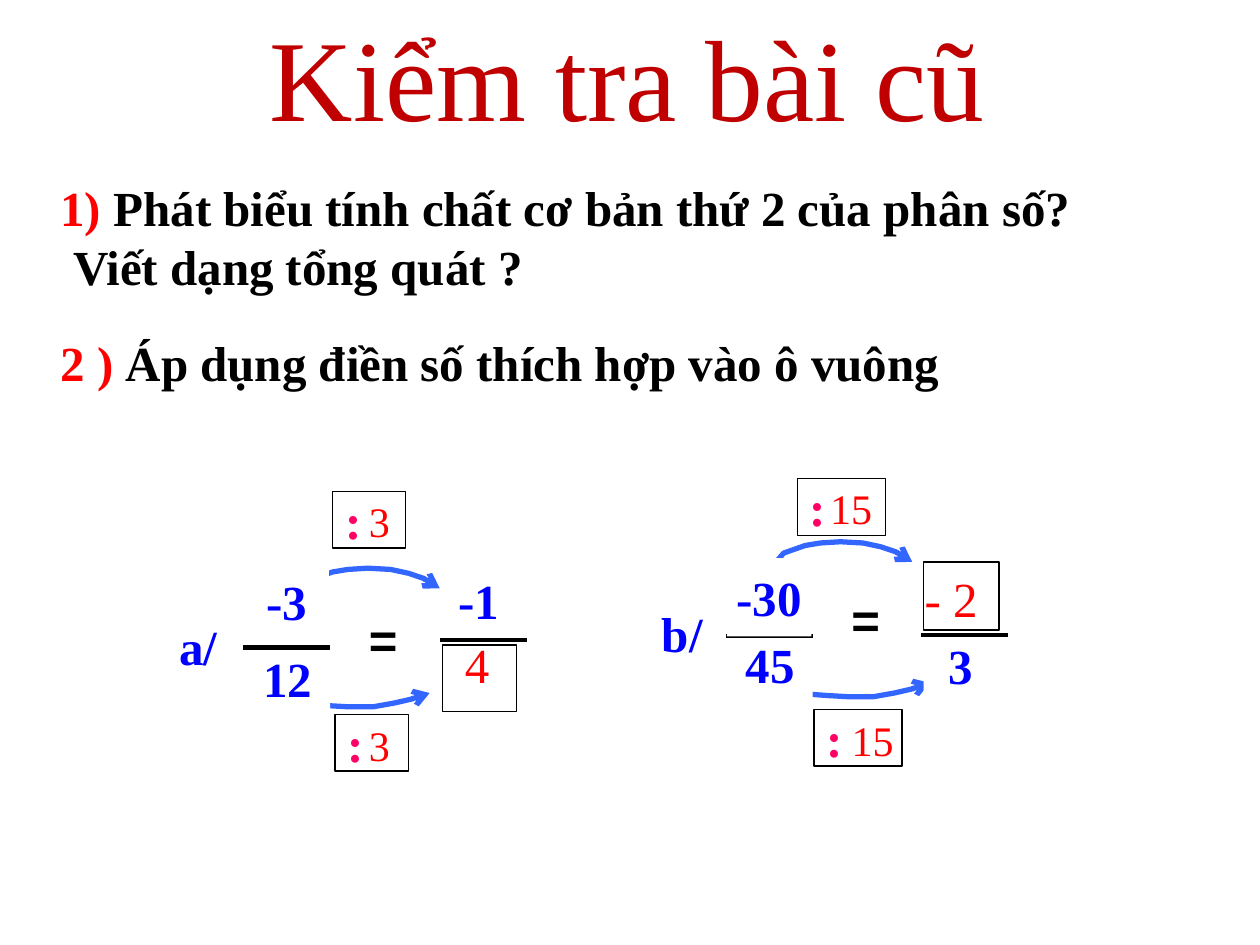
from dataclasses import dataclass

from pptx import Presentation
from pptx.dml.color import RGBColor as RGB
from pptx.enum.shapes import MSO_CONNECTOR as CONN, MSO_SHAPE as SHAPE
from pptx.enum.text import MSO_ANCHOR as ANCHOR, MSO_AUTO_SIZE as AUTO, PP_ALIGN as ALIGN
from pptx.oxml.ns import qn
from pptx.util import Inches, Pt
from lxml.etree import SubElement


@dataclass(frozen=True)
class Theme:
    serif: str = "Times New Roman"
    sans: str = "Arial"
    title: RGB = RGB(0xC0, 0x00, 0x00)
    answer: RGB = RGB(0xFF, 0x00, 0x00)
    number: RGB = RGB(0x00, 0x00, 0xFF)
    colon: RGB = RGB(0xFF, 0x00, 0x66)
    arrow: RGB = RGB(0x33, 0x66, 0xFF)
    ink: RGB = RGB(0x00, 0x00, 0x00)
    paper: RGB = RGB(0xFF, 0xFF, 0xFF)
    title_size: int = 66
    text_size: int = 28
    small_size: int = 24


T = Theme()
prs = Presentation()
prs.slide_width, prs.slide_height = Inches(10), Inches(7.5)
COL, ROW = prs.slide_width / 100, prs.slide_height / 75
s = prs.slides.add_slide(prs.slide_layouts[1])


def grid(x, y, w, h):
    return int(x * COL), int(y * ROW), int(w * COL), int(h * ROW)


def style(runs, color, size=T.text_size, bold=True, font=T.serif):
    for r in runs:
        r.font.name, r.font.size, r.font.bold = font, Pt(size), bold
        r.font.color.rgb = color


title, body = s.shapes.title, s.placeholders[1]
title.left, title.top, title.width, title.height = grid(20.4, 0, 58.8, 12)
tf = title.text_frame
tf.text = "Kiểm tra bài cũ"
tf.word_wrap, tf.auto_size = False, AUTO.NONE
style(tf.paragraphs[0].runs, T.title, T.title_size, False)

body.left, body.top, body.width, body.height = grid(3.8, 13.6, 82.5, 18)
tf = body.text_frame
tf.word_wrap, tf.auto_size = True, AUTO.NONE
questions = [
    ("1) ", "Phát biểu tính chất cơ bản thứ 2 của phân số? Viết dạng tổng quát ?", 0),
    ("2 ) ", "Áp dụng điền số thích hợp vào ô vuông", 21),
]
for i, (number, question, gap) in enumerate(questions):
    p = tf.add_paragraph() if i else tf.paragraphs[0]
    p.text = number
    p.add_run().text = question
    p.space_before = Pt(gap)
    pPr = p._p.get_or_add_pPr()
    pPr.set("marL", str(int(COL)))
    pPr.set("indent", str(-int(COL)))
    SubElement(pPr, qn("a:buNone"))
    style(p.runs[:1], T.answer)
    style(p.runs[1:], T.ink)

lower = [(0, 0), (0.7, 0.5), (2.6, 0.9), (3.9, 1), (5.7, 1.1),
         (7.6, 1.1), (9.3, 0.8), (10.6, 0.5), (12.1, 0)]
upper = [(0, 0), (0.6, -0.7), (2.3, -1.3), (3.5, -1.5), (5.1, -1.6),
         (6.9, -1.5), (8.3, -1.2), (9.5, -0.8), (10.8, 0)]
for x, y, curve in [(22, 55, lower), (61.7, 54.2, lower),
                    (61.6, 44.6, upper), (24.1, 46.7, upper)]:
    points = [(int((x + dx) * COL), int((y + dy) * ROW)) for dx, dy in curve]
    fb = s.shapes.build_freeform(*points[0], scale=1.0)
    fb.add_line_segments(points[1:], close=False)
    sp = fb.convert_to_shape()
    sp.shadow.inherit = False
    sp.fill.background()
    sp.line.color.rgb, sp.line.width = T.arrow, Pt(3)
    SubElement(sp.line._get_or_add_ln(), qn("a:tailEnd"), type="arrow")

denominators = [
    ("12", 19.5, 50.7, 6.7, 6.2), ("a/", 12.4, 48.3, 6.7, 6),
    ("45", 57.8, 49.6, 6.7, 6.2), ("b/", 50.8, 47.2, 6.7, 6),
    ("3", 73.3, 49.7, 5.9, 6.1),
]
bars = [(19.3, 51.4), (34.9, 50.8), (57.6, 50.5), (73.1, 50.4)]
numerators = [
    ("-3", 19.4, 44.6, 6.7, 6.2), ("-1", 35, 44.9, 6, 5.4),
    ("-30", 57.7, 44.3, 6.7, 6.2),
]
blanks = [("", 35.1, 51.2, 5.9, 5.3), ("", 73.3, 44.6, 6, 5.4)]
divisors = [
    (":", 64.6, 56.3, 7, 4.5), (":", 63.3, 38, 7, 4.5),
    (":", 26.4, 39, 5.8, 4.5), (":", 26.6, 56.7, 5.8, 4.5),
]
layers = [
    (denominators, True, False, T.number, ALIGN.CENTER),
    (bars, False, True, T.ink, None),
    (numerators, True, False, T.number, ALIGN.CENTER),
    (blanks, True, True, T.number, ALIGN.CENTER),
    (divisors, False, True, T.colon, ALIGN.LEFT),
]
for items, filled, outlined, color, align in layers:
    for item in items:
        if items is bars:
            x, y, w, h = grid(*item, 6.9, 0)
            sp = s.shapes.add_connector(CONN.STRAIGHT, x, y, x + w, y)
            SubElement(sp._element.spPr, qn("a:effectLst"))
            sp.line.color.rgb, sp.line.width = color, Pt(2.5)
            continue
        text, *place = item
        sp = s.shapes.add_shape(SHAPE.RECTANGLE, *grid(*place))
        sp.shadow.inherit = False
        if filled:
            sp.fill.solid()
            sp.fill.fore_color.rgb = T.paper
        else:
            sp.fill.background()
        if outlined:
            sp.line.color.rgb, sp.line.width = T.ink, Pt(0.75)
        else:
            sp.line.fill.background()
        tf = sp.text_frame
        tf.word_wrap, tf.vertical_anchor = False, ANCHOR.MIDDLE
        tf.text = text
        tf.paragraphs[0].alignment = align
        style(tf.paragraphs[0].runs, color)

signs = [("=", 28.3, 47.9, 5), ("=", 66.6, 46.3, 5)]
answers = [("4", 35.9, 49.9, 5.8), ("- 2", 72.4, 44.6, 7.3)]
quotients = [("3", 28.3, 38.8, 5), ("3", 28.3, 56.6, 5.8),
             ("15", 64.9, 37.8, 7.2), ("15", 66.6, 56.2, 5.9)]
for items, height, look in [
    (signs, 5.7, (T.ink, T.text_size, True, T.sans)),
    (answers, 5.7, (T.answer, T.text_size, False)),
    (quotients, 5.1, (T.answer, T.small_size, False)),
]:
    for text, x, y, w in items:
        tf = s.shapes.add_textbox(*grid(x, y, w, height)).text_frame
        tf.word_wrap = True
        tf.text = text
        style(tf.paragraphs[0].runs, *look)

prs.save("out.pptx")
